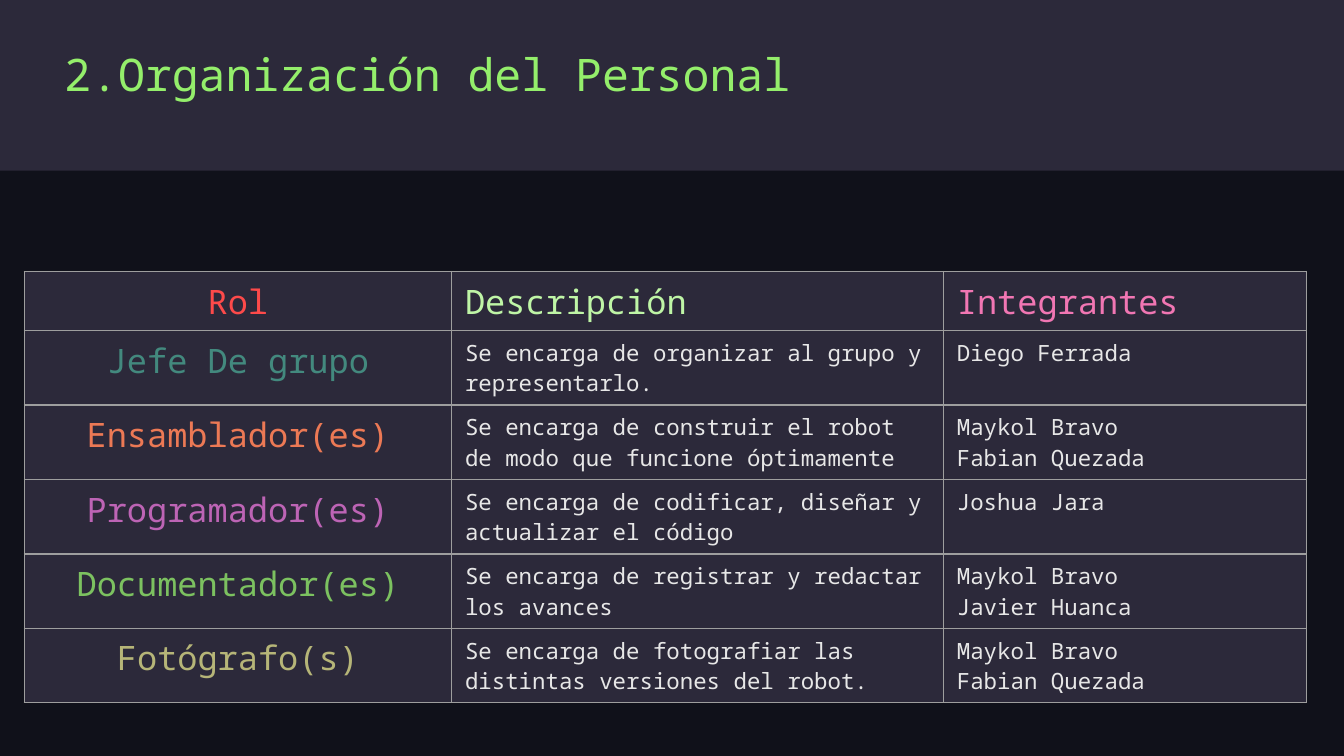
from pptx import Presentation
from pptx.dml.color import RGBColor
from pptx.enum.shapes import MSO_SHAPE
from pptx.enum.text import PP_ALIGN
from pptx.oxml import parse_xml
from pptx.oxml.ns import nsdecls
from pptx.util import Inches, Pt

FONT = "Noto Sans Mono"
BACKGROUND, PANEL, BORDER, BODY = "10111A", "2C293A", "9E9E9E", "E7E7E7"
TITLE = ("2.Organización del Personal", "94EE6B")
HEADERS = [("Rol", "FD4A4A"), ("Descripción", "BFF5A6"), ("Integrantes", "F176B3")]
ROLES = [
    ("Jefe De grupo", "43897E",
     "Se encarga de organizar al grupo y representarlo.", "Diego Ferrada"),
    ("Ensamblador(es)", "EC7955",
     "Se encarga de construir el robot de modo que funcione óptimamente",
     "Maykol Bravo\nFabian Quezada"),
    ("Programador(es)", "BD64B5",
     "Se encarga de codificar, diseñar y actualizar el código", "Joshua Jara"),
    ("Documentador(es)", "7CC160",
     "Se encarga de registrar y redactar los avances",
     "Maykol Bravo\nJavier Huanca"),
    ("Fotógrafo(s)", "B6B578",
     "Se encarga de fotografiar las distintas versiones del robot.",
     "Maykol Bravo\nFabian Quezada"),
]
COL_WIDTHS = [3.18, 3.66, 2.7]
TABLE_HEIGHT, HEADER_HEIGHT = 3.21, 0.44
ROLE_HEIGHT = (TABLE_HEIGHT - HEADER_HEIGHT) / len(ROLES)
ROW_HEIGHTS = [HEADER_HEIGHT] + [ROLE_HEIGHT] * len(ROLES)


def rgb(color):
    return RGBColor.from_string(color)


def fill(obj, color):
    obj.fill.solid()
    obj.fill.fore_color.rgb = rgb(color)


def write(tf, text, size, color, align=PP_ALIGN.LEFT):
    tf.text = text
    for p in tf.paragraphs:
        p.alignment = align
        for r in p.runs:
            r.font.name = FONT
            r.font.size = Pt(size)
            r.font.color.rgb = rgb(color)


def add_borders(cell):
    tcPr = cell._tc.get_or_add_tcPr()
    for i, side in enumerate(("lnL", "lnR", "lnT", "lnB")):
        tcPr.insert(i, parse_xml(
            f'<a:{side} {nsdecls("a")} w="{Pt(0.75)}"><a:solidFill>'
            f'<a:srgbClr val="{BORDER}"/></a:solidFill></a:{side}>'))


prs = Presentation()
prs.slide_width = Inches(10)
prs.slide_height = prs.slide_width * 9 // 16
s = prs.slides.add_slide(prs.slide_layouts[6])
fill(s.background, BACKGROUND)

band = s.shapes.add_shape(MSO_SHAPE.RECTANGLE, 0, 0, prs.slide_width, Inches(1.27))
band.shadow.inherit = False
fill(band, PANEL)
band.line.fill.background()

title = s.shapes.add_textbox(Inches(0.38), Inches(0.25), Inches(8.43), Inches(0.63))
tf = title.text_frame
tf.word_wrap = True
tf.margin_left = tf.margin_right = tf.margin_top = tf.margin_bottom = Inches(0.1)
write(tf, TITLE[0], 24, TITLE[1])

rows = [[(text, 18, color) for text, color in HEADERS]]
rows += [[(role, 18, color), (task, 12, BODY), (members, 12, BODY)]
         for role, color, task, members in ROLES]

table = s.shapes.add_table(
    len(rows), len(COL_WIDTHS), Inches(0.18), Inches(2.02),
    Inches(sum(COL_WIDTHS)), Inches(TABLE_HEIGHT)).table
table.first_row = table.horz_banding = False
for col, width in zip(table.columns, COL_WIDTHS):
    col.width = Inches(width)
for row, height, values in zip(table.rows, ROW_HEIGHTS, rows):
    row.height = Inches(height)
    for i, (cell, value) in enumerate(zip(row.cells, values)):
        fill(cell, PANEL)
        add_borders(cell)
        write(cell.text_frame, *value, PP_ALIGN.LEFT if i else PP_ALIGN.CENTER)

prs.save("out.pptx")
